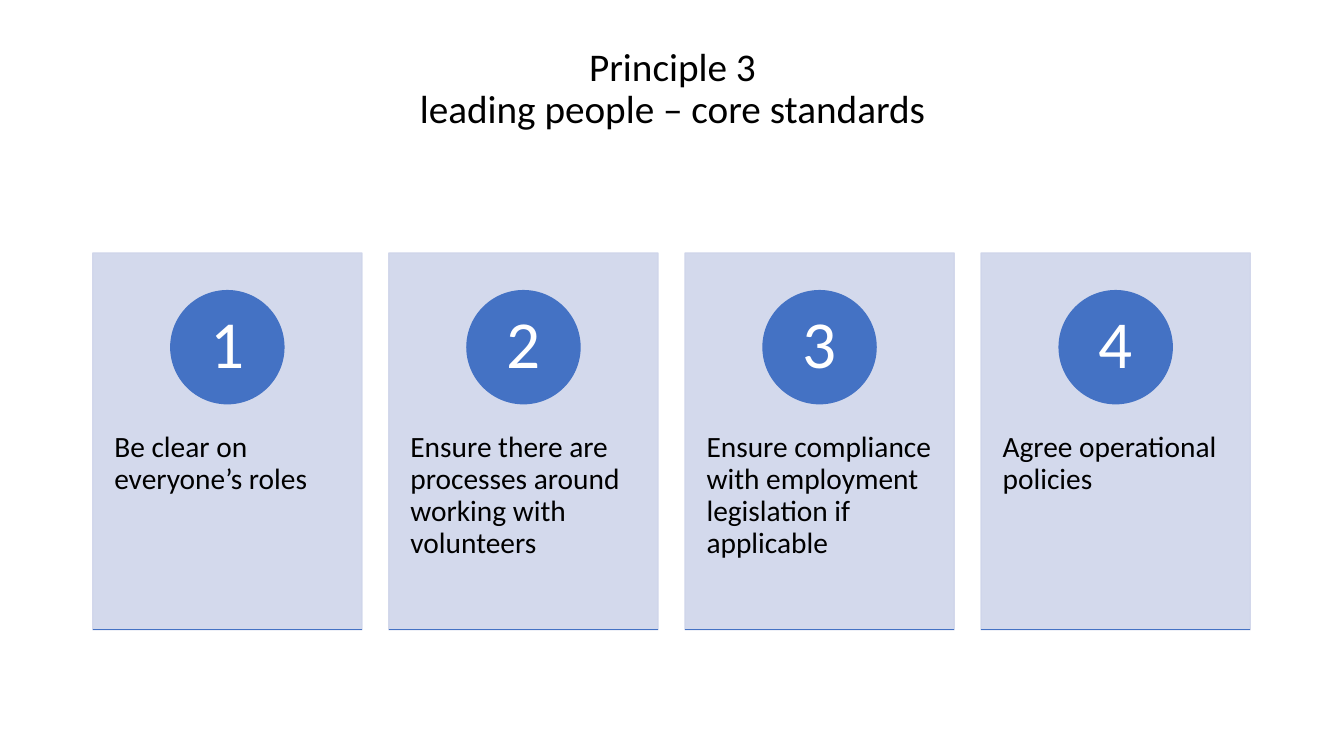
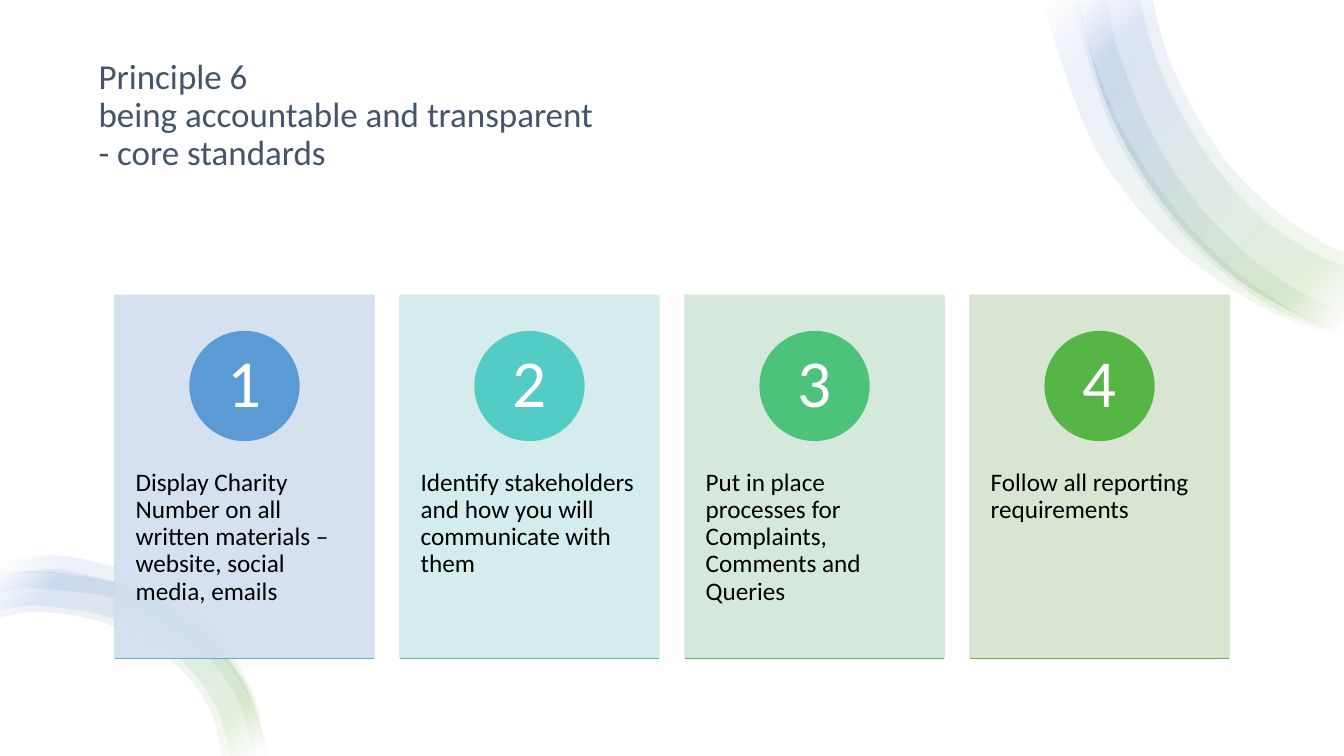
from lxml import etree
from pptx import Presentation
from pptx.dml.color import RGBColor
from pptx.enum.shapes import MSO_CONNECTOR, MSO_SHAPE
from pptx.enum.text import MSO_ANCHOR, PP_ALIGN
from pptx.oxml.ns import qn
from pptx.util import Inches, Pt

FONT = "Calibri"
SLIDE_W, SLIDE_H = 13.33, 7.5
BLACK, WHITE, SLATE, BLUE, GREEN = "000000", "FFFFFF", "44546A", "4472C4", "70AD47"

# Slide content: each card is (text, card colour, circle colour, base line colour)
SLIDES = [
    dict(title=["Principle 3", "leading people – core standards"],
         title_box=(0.92, 0.4, 11.5, 0.98), title_size=28, title_color=BLACK,
         title_align=PP_ALIGN.CENTER, ribbons=False,
         left=0.92, top=2.51, width=2.67, text_size=21,
         cards=[(text, "CFD5EA", BLUE, BLUE) for text in (
             "Be clear on everyone’s roles",
             "Ensure there are processes around working with volunteers",
             "Ensure compliance with employment legislation if applicable",
             "Agree operational policies")]),
    dict(title=["Principle 6", "being accountable and transparent", "- core standards"],
         title_box=(0.88, 0.5, 11.57, 1.3), title_size=25, title_color=SLATE,
         title_align=PP_ALIGN.LEFT, ribbons=True,
         left=1.14, top=2.93, width=2.57, text_size=18,
         cards=[
             ("Display Charity Number on all written materials – website, social media, emails",
              "D2DEEF", "5B9BD5", "57B7D1"),
             ("Identify stakeholders and how you will communicate with them",
              "D0ECEA", "53CCC5", "4FC7A0"),
             ("Put in place processes for Complaints, Comments and Queries",
              "D0E7D8", "4CC27B", "48BD58"),
             ("Follow all reporting requirements", "D5E3CF", "55B646", GREEN)]),
]

# Corner ribbons: (outer edge, inner edge), each a list of points on a smooth curve
TOP_EDGE = [(13.33, 3.32), (13.09, 3.24), (12.23, 2.74), (11.52, 2), (10.99, 1.07), (10.69, 0)]
LOW_EDGE = [(2.63, 7.5), (2.62, 7.35), (2.36, 6.69), (1.85, 6.16), (1.17, 5.8),
            (0.4, 5.67), (0, 5.72)]
RIBBONS = [
    ([(13.33, 3.35), (12.82, 3.19), (12.21, 2.87), (11.65, 2.45), (11.16, 1.92),
      (10.78, 1.31), (10.41, 0.26), (10.37, 0)],
     [(10.7, 0), (10.82, 0.52), (11.06, 1.15), (11.4, 1.73), (11.81, 2.27),
      (12.3, 2.73), (12.86, 3.1), (13.33, 3.28)]),
    (TOP_EDGE,
     [(11.43, 0), (11.58, 0.55), (11.85, 1.12), (12.19, 1.64), (12.61, 2.06),
      (13.07, 2.38), (13.33, 2.51)]),
    ([(13.33, 3.33), (12.79, 3.14), (12.23, 2.79), (11.73, 2.33), (11.32, 1.79),
      (10.99, 1.19), (10.68, 0.2), (10.65, 0)],
     [(10.98, 0), (11.07, 0.44), (11.29, 1.04), (11.58, 1.61), (11.95, 2.11),
      (12.39, 2.55), (12.9, 2.9), (13.33, 3.08)]),
    (TOP_EDGE,
     [(11.3, 0), (11.47, 0.59), (11.75, 1.19), (12.1, 1.72), (12.53, 2.18),
      (13.01, 2.5), (13.33, 2.64)]),
    (LOW_EDGE,
     [(0, 6.13), (0.4, 6.07), (1.07, 6.19), (1.66, 6.52), (2.06, 7), (2.2, 7.5)]),
    (LOW_EDGE,
     [(0, 6.06), (0.4, 6.01), (1.09, 6.13), (1.7, 6.47), (2.12, 6.97), (2.28, 7.5)]),
    ([(2.63, 7.5), (2.47, 6.85), (2.03, 6.27), (1.42, 5.87), (0.69, 5.67), (0.31, 5.66),
      (0, 5.71)],
     [(0, 5.88), (0.33, 5.84), (1.01, 5.91), (1.34, 6.03), (1.92, 6.39), (2.34, 6.91),
      (2.51, 7.5)]),
    ([(2.64, 7.5), (2.5, 6.87), (2.1, 6.23), (1.48, 5.75), (0.71, 5.53), (0.31, 5.53),
      (0, 5.59)],
     [(0, 5.72), (0.32, 5.68), (0.87, 5.73), (1.39, 5.91), (2, 6.31), (2.45, 6.89),
      (2.62, 7.5)]),
]
RIBBON_STOPS = [(2, WHITE), (16, GREEN), (85, BLUE), (100, WHITE)]


def rgb(color):
    return RGBColor.from_string(color)


def set_alpha(parent, percent):
    for clr in parent.iter(qn("a:srgbClr")):
        etree.SubElement(clr, qn("a:alpha"), val=str(percent * 1000))


def write(sp, lines, size, color, align, anchor, margins):
    tf = sp.text_frame
    tf.word_wrap = True
    tf.vertical_anchor = anchor
    tf.margin_left = tf.margin_right = Inches(margins[0])
    tf.margin_top, tf.margin_bottom = Inches(margins[1]), Inches(margins[2])
    p = tf.paragraphs[0]
    for i, line in enumerate(lines):
        if i:
            p.add_line_break()
        p.add_run().text = line
    p.alignment = align
    p.line_spacing = 0.9
    p.font.name, p.font.size = FONT, Pt(size)
    p.font.color.rgb = rgb(color)


def add_solid(s, kind, x, y, w, h, color):
    sp = s.shapes.add_shape(kind, Inches(x), Inches(y), Inches(w), Inches(h))
    sp.shadow.inherit = False
    sp.fill.solid()
    sp.fill.fore_color.rgb = sp.line.color.rgb = rgb(color)
    sp.line.width = Pt(1)
    return sp


def curve_edge(points, segments):
    """Turn the straight segments between the points into Catmull-Rom curves."""
    padded = [points[0], *points, points[-1]]
    for a, b, c, d, seg in zip(padded, padded[1:], padded[2:], padded[3:], segments):
        bezier = etree.Element(qn("a:cubicBezTo"))
        controls = ([q + (r - p) / 6 for p, q, r in zip(a, b, c)],
                    [q - (r - p) / 6 for p, q, r in zip(b, c, d)], c)
        for x, y in controls:
            etree.SubElement(bezier, qn("a:pt"), x=str(round(x)), y=str(round(y)))
        seg.getparent().replace(seg, bezier)


def add_ribbon(s, outer, inner):
    points = [(Inches(x), Inches(y)) for x, y in outer + inner]
    fb = s.shapes.build_freeform(*points[0], scale=1.0)
    fb.add_line_segments(points[1:], close=True)
    sp = fb.convert_to_shape()
    sp.shadow.inherit = False
    sp.line.fill.background()
    # Curved edges, joined by straight ends
    local = [(x - sp.left, y - sp.top) for x, y in points]
    segments = list(sp._element.spPr.iter(qn("a:lnTo")))
    n = len(outer)
    curve_edge(local[:n], segments[:n - 1])
    curve_edge(local[n:], segments[n:])
    # Gradient from lower right to upper left
    sp.fill.gradient()
    sp.fill.gradient_angle = 135
    stops = sp._element.spPr.find(qn("a:gradFill")).find(qn("a:gsLst"))
    for old in list(stops):
        stops.remove(old)
    for pos, color in RIBBON_STOPS:
        gs = etree.SubElement(stops, qn("a:gs"), pos=str(pos * 1000))
        etree.SubElement(gs, qn("a:srgbClr"), val=color)
    set_alpha(stops, 10)


def add_card(s, number, x, y, w, text, size, colors):
    card_color, circle_color, base_color = colors
    h = 1.4 * w
    card = add_solid(s, MSO_SHAPE.RECTANGLE, x, y, w, h, card_color)
    set_alpha(card._element.spPr, 90)
    write(card, [text], size, BLACK, PP_ALIGN.LEFT, MSO_ANCHOR.TOP,
          (0.08 * w, 0.38 * h + 0.36, 0.1))
    # Numbered circle
    d = 0.42 * w
    circle = add_solid(s, MSO_SHAPE.OVAL, x + (w - d) / 2, y + 0.1 * h, d, d, circle_color)
    write(circle, [str(number)], 48, WHITE, PP_ALIGN.CENTER, MSO_ANCHOR.MIDDLE, (0, 0, 0))
    # Base line
    base = s.shapes.add_connector(MSO_CONNECTOR.STRAIGHT, Inches(x), Inches(y + h),
                                  Inches(x + w), Inches(y + h))
    base.line.color.rgb = rgb(base_color)
    base.line.width = Pt(0.75)
    etree.SubElement(base._element.spPr, qn("a:effectLst"))


def build_slide(prs, data):
    s = prs.slides.add_slide(prs.slide_layouts[6])
    if data["ribbons"]:
        backdrop = add_solid(s, MSO_SHAPE.RECTANGLE, 0, 0, SLIDE_W, SLIDE_H, WHITE)
        backdrop.line.fill.background()
        for outer, inner in RIBBONS:
            add_ribbon(s, outer, inner)
    title = s.shapes.add_textbox(*map(Inches, data["title_box"]))
    write(title, data["title"], data["title_size"], data["title_color"],
          data["title_align"], MSO_ANCHOR.MIDDLE, (0.1, 0.05, 0.05))
    # Row of cards, with gaps a tenth of the card width
    w = data["width"]
    for i, (text, *colors) in enumerate(data["cards"]):
        add_card(s, i + 1, data["left"] + i * 1.1 * w, data["top"], w,
                 text, data["text_size"], colors)


def main():
    prs = Presentation()
    prs.slide_width, prs.slide_height = Inches(SLIDE_W), Inches(SLIDE_H)
    for data in SLIDES:
        build_slide(prs, data)
    prs.save("out.pptx")


if __name__ == "__main__":
    main()
